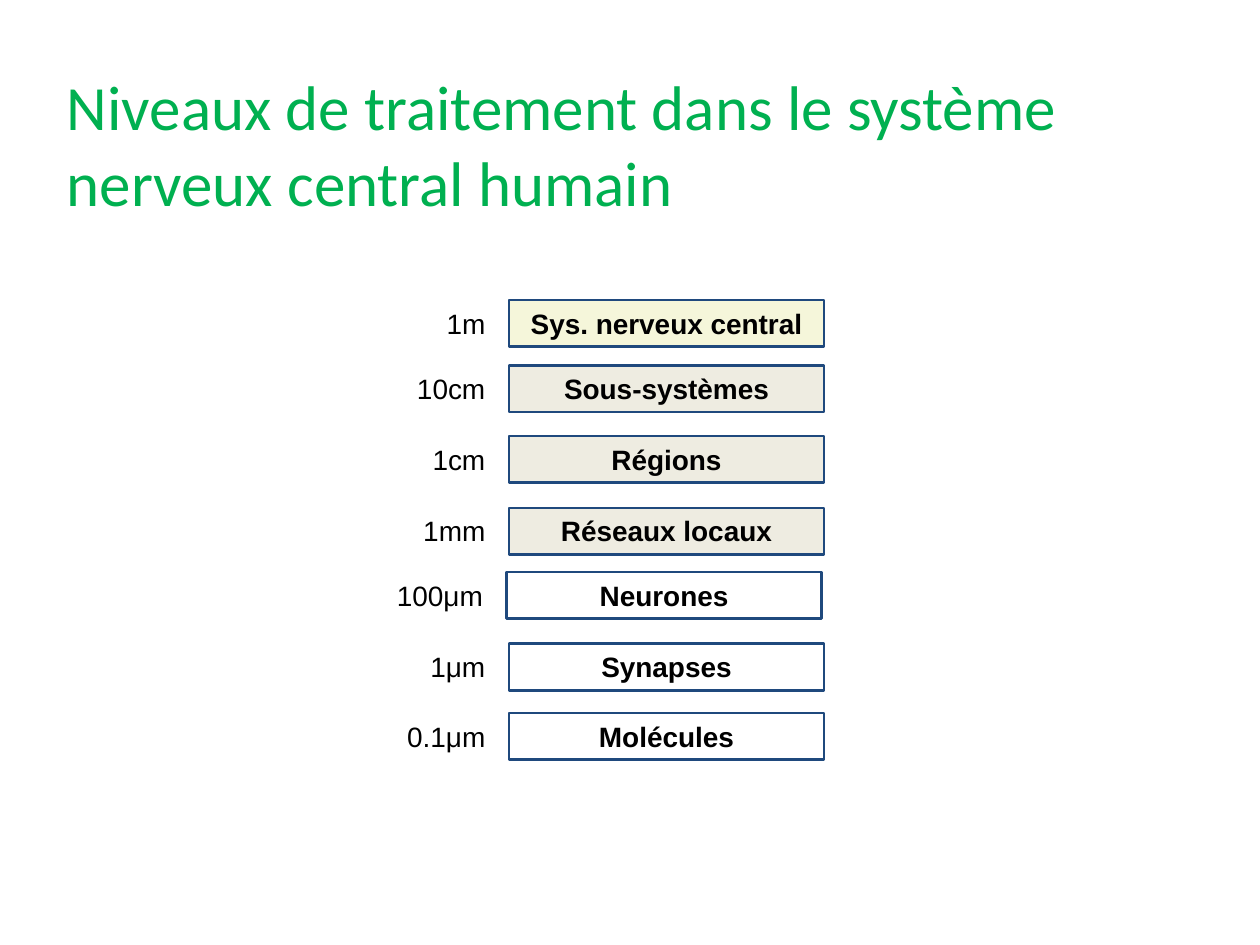
from dataclasses import dataclass

from pptx import Presentation
from pptx.dml.color import RGBColor as Rgb
from pptx.enum.shapes import MSO_SHAPE as Shape
from pptx.enum.text import MSO_ANCHOR as Anchor, MSO_AUTO_SIZE as AutoSize, PP_ALIGN as Align
from pptx.util import Pt


@dataclass(frozen=True)
class Theme:
    title_color: Rgb = Rgb(0x00, 0xB0, 0x50)
    text_color: Rgb = Rgb(0x00, 0x00, 0x00)
    border: Rgb = Rgb(0x1F, 0x49, 0x7D)
    cream: Rgb = Rgb(0xF5, 0xF6, 0xDA)
    beige: Rgb = Rgb(0xEE, 0xEC, 0xE1)
    title_size: Pt = Pt(36)
    body_size: Pt = Pt(16)
    border_width: Pt = Pt(1.5)


THEME = Theme()

# Columns and row height, in points
SCALE_LEFT, SCALE_WIDTH = 212.4, 72
LEVEL_LEFT, LEVEL_WIDTH = 290.9, 180
ROW_HEIGHT = 26.7

# Scale, level, fill, top and horizontal shift, from large to small
LEVELS = [
    ("1m", "Sys. nerveux central", THEME.cream, 171.4, 0),
    ("10cm", "Sous-systèmes", THEME.beige, 208.8, 0),
    ("1cm", "Régions", THEME.beige, 249.1, 0),
    ("1mm", "Réseaux locaux", THEME.beige, 290.2, 0),
    ("100μm", "Neurones", None, 326.9, -1.4),
    ("1μm", "Synapses", None, 367.9, 0),
    ("0.1μm", "Molécules", None, 407.5, 0),
]


def apply(target, values):
    for name, value in values.items():
        setattr(target, name, value)


def write(box, text, align, color, frame_format, font_format):
    frame = box.text_frame
    apply(frame, {"word_wrap": True, **frame_format})
    para = frame.paragraphs[0]
    para.alignment = align
    span = para.add_run()
    span.text = text
    apply(span.font, font_format)
    span.font.color.rgb = color


def write_body(box, text, align, bold):
    write(box, text, align, THEME.text_color,
          {"auto_size": AutoSize.SHAPE_TO_FIT_TEXT, "vertical_anchor": Anchor.TOP},
          {"name": "Arial", "size": THEME.body_size, "bold": bold})


def add_title(page, text):
    title = page.shapes.title
    apply(title, {"left": Pt(31), "top": Pt(30.2), "width": Pt(674.6), "height": Pt(103.7)})
    write(title, text, Align.LEFT, THEME.title_color,
          {"auto_size": AutoSize.NONE, "vertical_anchor": Anchor.MIDDLE},
          {"name": "Calibri", "size": THEME.title_size})


def add_level_box(group, text, fill, left, top):
    box = group.shapes.add_shape(Shape.RECTANGLE, Pt(left), Pt(top),
                                 Pt(LEVEL_WIDTH), Pt(ROW_HEIGHT))
    box.shadow.inherit = False
    if fill is None:
        box.fill.background()
    else:
        box.fill.solid()
        box.fill.fore_color.rgb = fill
    box.line.color.rgb = THEME.border
    box.line.width = THEME.border_width
    write_body(box, text, Align.CENTER, True)


def add_scale_label(group, text, left, top):
    label = group.shapes.add_textbox(Pt(left), Pt(top), Pt(SCALE_WIDTH), Pt(ROW_HEIGHT))
    write_body(label, text, Align.RIGHT, False)


def main():
    deck = Presentation()
    apply(deck, {"slide_width": Pt(720), "slide_height": Pt(540)})
    page = deck.slides.add_slide(deck.slide_layouts.get_by_name("Title Only"))

    # Title
    add_title(page, "Niveaux de traitement dans le système nerveux central humain")

    # One group per level, the smallest at the back
    for scale, level, fill, top, shift in reversed(LEVELS):
        group = page.shapes.add_group_shape()
        add_level_box(group, level, fill, LEVEL_LEFT + shift, top)
        add_scale_label(group, scale, SCALE_LEFT + shift, top)

    deck.save("out.pptx")


if __name__ == "__main__":
    main()
